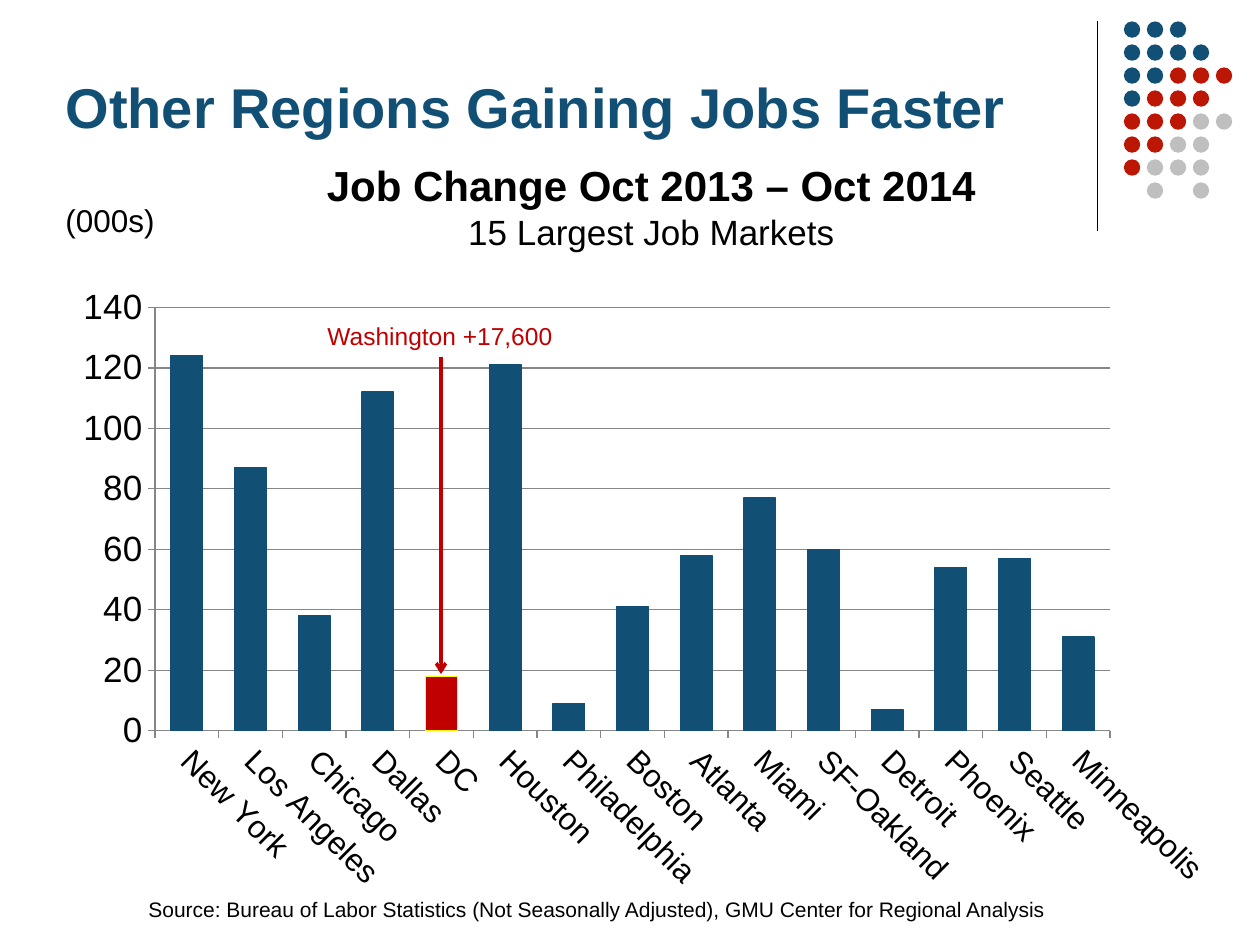
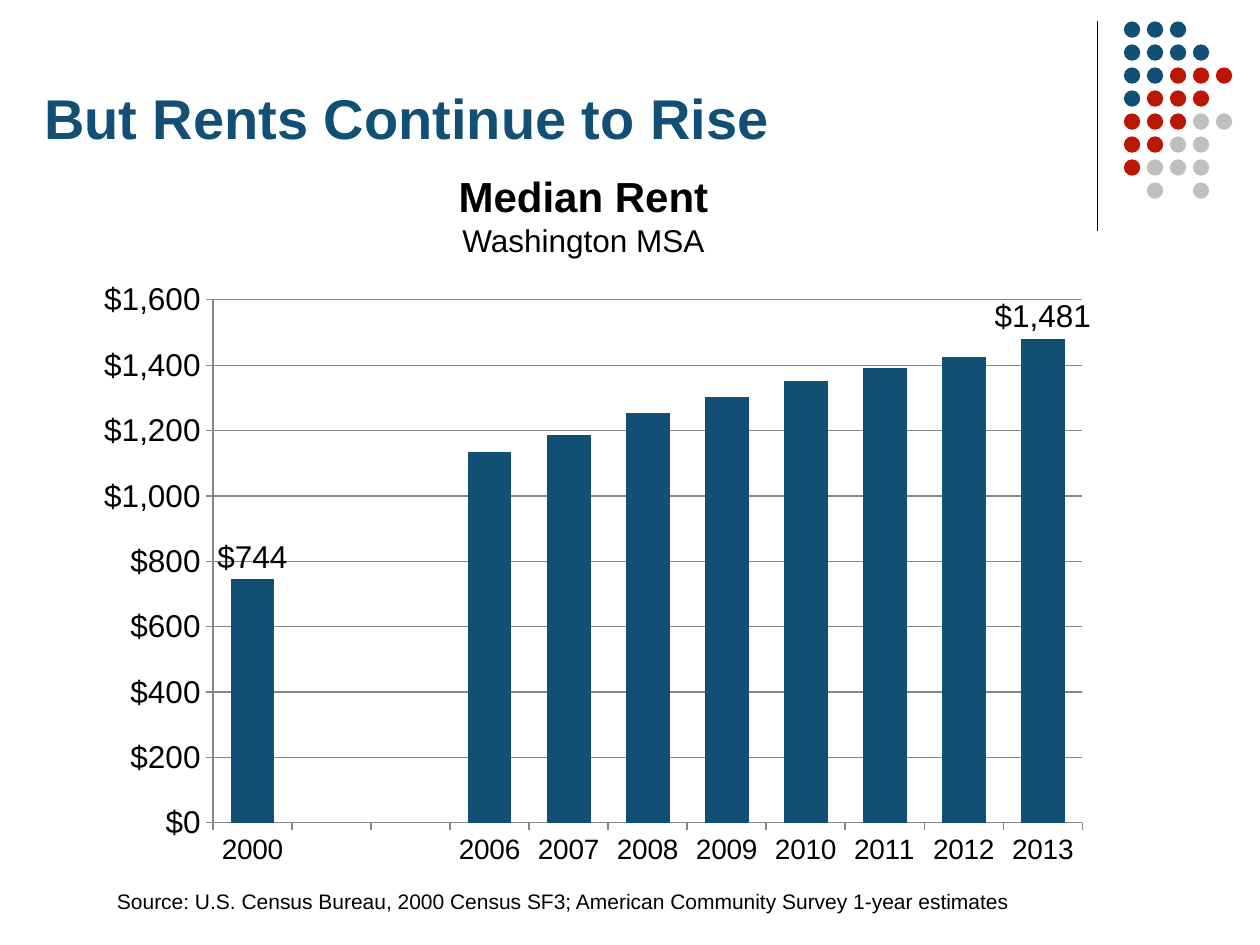
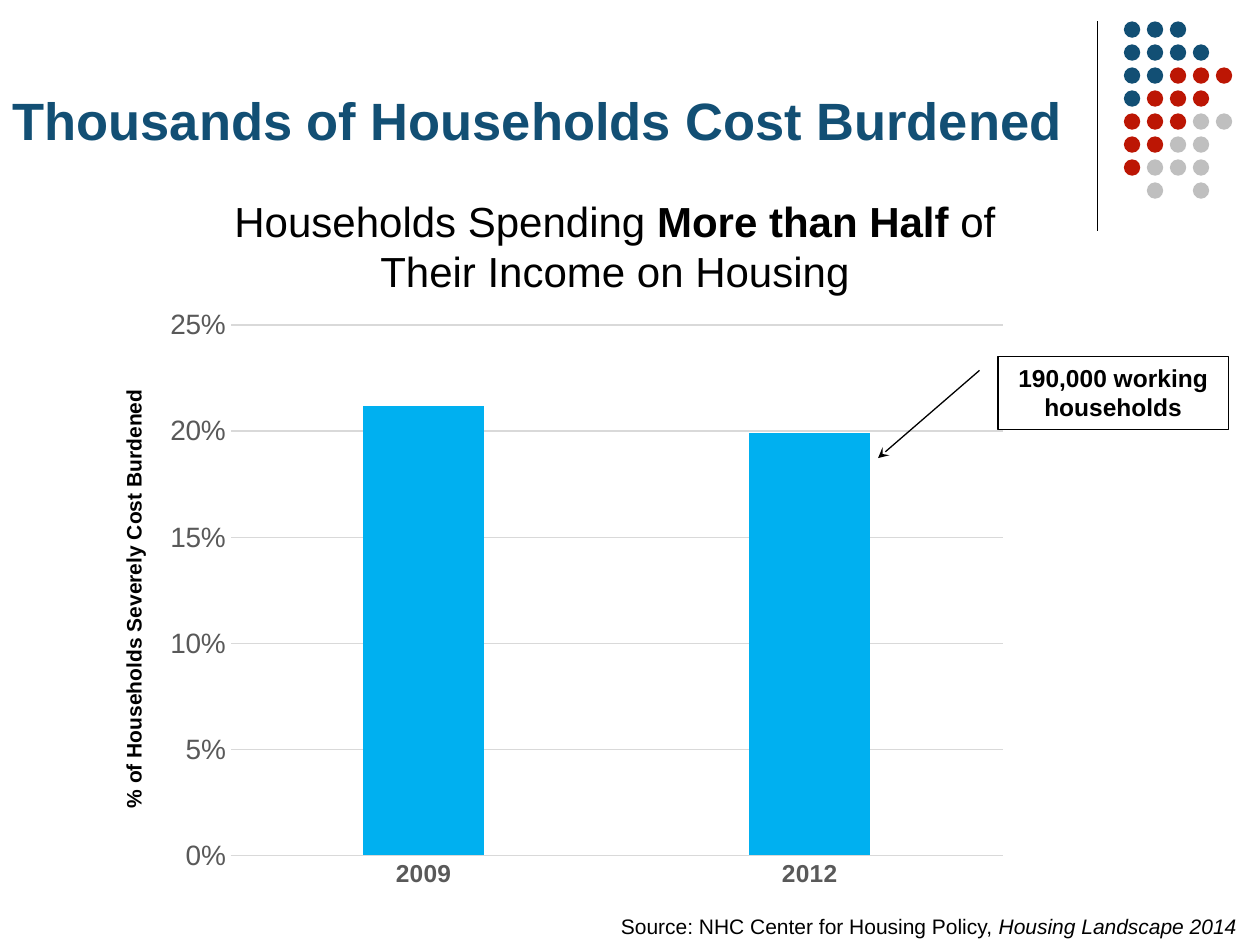
from pptx import Presentation
from pptx.chart.data import CategoryChartData
from pptx.dml.color import RGBColor
from pptx.enum.chart import XL_CHART_TYPE, XL_LABEL_POSITION, XL_TICK_LABEL_POSITION, XL_TICK_MARK
from pptx.enum.shapes import MSO_CONNECTOR, MSO_SHAPE
from pptx.enum.text import MSO_ANCHOR, MSO_AUTO_SIZE, PP_ALIGN
from pptx.oxml.xmlchemy import OxmlElement
from pptx.util import Inches, Pt

COLORS = {
    "navy": "124F74",
    "dot_red": "BC1604",
    "silver": "BFBFBF",
    "red": "C00000",
    "yellow": "FFFF00",
    "sky": "00B0F0",
    "black": "000000",
    "axis": "868686",
    "grid": "D9D9D9",
    "label": "595959",
}
FONT = "Arial"
DOT_ROWS = ["BBB..", "BBBB.", "BBRRR", "BRRR.", "RRRGG", "RRGG.", "RGGG.", ".G.G."]
DOT_COLORS = {"B": "navy", "R": "dot_red", "G": "silver"}


def rgb(name):
    return RGBColor.from_string(COLORS[name])


def inches(box):
    return [Inches(length) for length in box]


def style_font(font, size, color="black", **flags):
    values = {"name": FONT, "size": Pt(size), "bold": False, **flags}
    for name, value in values.items():
        setattr(font, name, value)
    font.color.rgb = rgb(color)


def style_line(line, color, width=0.75):
    line.color.rgb = rgb(color)
    line.width = Pt(width)


def add_arrowhead(shape, kind):
    head = OxmlElement("a:tailEnd")
    head.set("type", kind)
    shape.element.xpath("./p:spPr/a:ln")[0].append(head)


def write_text(shape, paras, align=PP_ALIGN.LEFT, **frame_values):
    """Each paragraph is a list of (text, size, font values) spans."""
    frame = shape.text_frame
    values = {"word_wrap": True, "auto_size": MSO_AUTO_SIZE.NONE, **frame_values}
    for name, value in values.items():
        setattr(frame, name, value)
    for index, spans in enumerate(paras):
        para = frame.paragraphs[0] if index == 0 else frame.add_paragraph()
        para.alignment = align
        for text, size, font_values in spans:
            span = para.add_run()
            span.text = text
            style_font(span.font, size, **font_values)


def add_text(page, box, paras, **values):
    write_text(page.shapes.add_textbox(*inches(box)), paras, **values)


def add_line(page, start, end, color, width):
    line = page.shapes.add_connector(MSO_CONNECTOR.STRAIGHT, *inches(start + end))
    style_line(line.line, color, width)
    line.element.xpath("./p:spPr")[0].append(OxmlElement("a:effectLst"))
    return line


def add_corner(page, box):
    """Vertical rule and the dot pattern to its right."""
    left, top, width, height = box
    add_line(page, (left, top), (left, top + height), "black", 0.75)
    size, dots_left = 0.13, left + 0.21
    pitch = (left + width - size - dots_left) / 4
    group = page.shapes.add_group_shape()
    for row, marks in enumerate(DOT_ROWS):
        for column, mark in enumerate(marks):
            if mark == ".":
                continue
            place = (dots_left + column * pitch, top + row * pitch, size, size)
            dot = group.shapes.add_shape(MSO_SHAPE.OVAL, *inches(place))
            dot.shadow.inherit = False
            dot.fill.solid()
            dot.fill.fore_color.rgb = rgb(DOT_COLORS[mark])
            dot.line.fill.background()


def add_page(deck, title, box, size=32):
    page = deck.slides.add_slide(deck.slide_layouts[5])
    holder = page.shapes.title
    holder.left, holder.top, holder.width, holder.height = inches(box)
    write_text(holder, [[(title, size, {"color": "navy", "bold": True})]],
               vertical_anchor=MSO_ANCHOR.BOTTOM)
    add_corner(page, (8.71, 0.17, 1.07, 1.66))
    return page


def set_plot_area(chart, box, plot):
    """Fix the inner plot; plot is in inches from the chart's corner."""
    layout = OxmlElement("c:layout")
    manual = OxmlElement("c:manualLayout")
    width, height = box[2:]
    left, top, plot_width, plot_height = plot
    settings = {
        "layoutTarget": "inner", "xMode": "edge", "yMode": "edge",
        "x": left / width, "y": top / height,
        "w": plot_width / width, "h": plot_height / height,
    }
    for name, value in settings.items():
        item = OxmlElement(f"c:{name}")
        item.set("val", str(value))
        manual.append(item)
    layout.append(manual)
    area = chart.element.xpath(".//c:plotArea")[0]
    for old in area.xpath("./c:layout"):
        area.remove(old)
    area.insert(0, layout)


def add_columns(page, box, plot, categories, values, color, gap, number_format, top_value, step,
                category_font, value_font, line_color="axis", tick=XL_TICK_MARK.OUTSIDE):
    data = CategoryChartData(number_format=number_format)
    data.categories = categories
    data.add_series("Series 1", values)
    chart = page.shapes.add_chart(XL_CHART_TYPE.COLUMN_CLUSTERED, *inches(box), data).chart
    chart.has_legend = chart.has_title = False
    style_font(chart.font, 18)
    set_plot_area(chart, box, plot)

    columns = chart.plots[0]
    columns.gap_width = gap
    columns.vary_by_categories = False
    series = columns.series[0]
    series.format.fill.solid()
    series.format.fill.fore_color.rgb = rgb(color)

    for axis, font in ((chart.category_axis, category_font), (chart.value_axis, value_font)):
        axis.major_tick_mark = tick
        axis.minor_tick_mark = XL_TICK_MARK.NONE
        style_line(axis.format.line, line_color)
        style_font(axis.tick_labels.font, **font)
    scale = chart.value_axis
    scale.minimum_scale, scale.maximum_scale, scale.major_unit = 0, top_value, step
    scale.tick_labels.number_format = number_format
    scale.tick_labels.number_format_is_linked = False
    scale.has_major_gridlines = True
    style_line(scale.major_gridlines.format.line, line_color)
    return chart


def build_jobs(deck):
    page = add_page(deck, "Other Regions Gaining Jobs Faster", (0.42, 0.25, 8.33, 0.91))
    jobs = {
        "New York": 124, "Los Angeles": 87, "Chicago": 38, "Dallas": 112, "DC": 18,
        "Houston": 121, "Philadelphia": 9, "Boston": 41, "Atlanta": 58, "Miami": 77,
        "SF-Oakland": 60, "Detroit": 7, "Phoenix": 54, "Seattle": 57, "Minneapolis": 31,
    }
    chart = add_columns(
        page, (0.44, 1.94, 9.17, 5.19), (0.79, 0.5, 7.58, 3.36), list(jobs), list(jobs.values()),
        "navy", 100, "#,##0", 140, 20, {"size": 18}, {"size": 20})
    chart.category_axis.tick_label_position = XL_TICK_LABEL_POSITION.LOW
    label_body = chart.element.xpath(".//c:catAx/c:txPr/a:bodyPr")[0]
    label_body.set("rot", "2700000")
    label_body.set("vert", "horz")

    # Washington's column stands out
    series = chart.plots[0].series[0]
    style_line(series.format.line, "navy")
    column = series.points[list(jobs).index("DC")].format
    column.fill.solid()
    column.fill.fore_color.rgb = rgb("red")
    style_line(column.line, "yellow")
    add_text(page, (2.5, 2.5, 2, 0.34), [[("Washington +17,600", 14, {"color": "red"})]],
             word_wrap=False)
    add_arrowhead(add_line(page, (3.5, 2.83), (3.5, 5.35), "red", 2), "arrow")

    # Heading, unit and source
    add_text(page, (1.42, 1.75, 7.5, 0.62),
             [[("Job Change Oct 2013 – Oct 2014", 24, {"bold": True})],
              [("15 Largest Job Markets", 20, {})]],
             align=PP_ALIGN.CENTER, vertical_anchor=MSO_ANCHOR.BOTTOM, margin_bottom=Inches(0.37))
    add_text(page, (0.42, 1.55, 0.92, 0.4), [[("(000s)", 18, {})]], word_wrap=False)
    source = ("Source: Bureau of Labor Statistics (Not Seasonally Adjusted), "
              "GMU Center for Regional Analysis")
    add_text(page, (1.08, 7.07, 8.83, 0.3), [[(source, 12, {})]])


def build_rents(deck):
    page = add_page(deck, "But Rents Continue to Rise", (0.25, 0.25, 8.42, 1))
    years = ["2000", "", ""] + [str(year) for year in range(2006, 2014)]
    rents = [744, None, None, 1133, 1187, 1253, 1303, 1351, 1391, 1424, 1481]
    chart = add_columns(
        page, (0.67, 2.15, 8.08, 4.82), (1.02, 0.23, 6.9, 4.15), years, rents,
        "navy", 80, '"$"#,##0', 1600, 200, {"size": 16}, {"size": 18})

    # Only the first and last columns carry a value
    series = chart.plots[0].series[0]
    series.data_labels.show_value = False
    for index in (0, len(rents) - 1):
        label = series.points[index].data_label
        style_font(label.font, 18)
        label.position = XL_LABEL_POSITION.OUTSIDE_END

    add_text(page, (0.42, 1.6, 8.42, 0.5),
             [[("Median Rent", 24, {"bold": True})], [("Washington MSA", 18, {})]],
             align=PP_ALIGN.CENTER, vertical_anchor=MSO_ANCHOR.BOTTOM)
    source = ("Source: U.S. Census Bureau, 2000 Census SF3; "
              "American Community Survey 1-year estimates")
    add_text(page, (0.83, 7, 7.92, 0.3), [[(source, 12, {})]])


def add_callout(page, box, text):
    callout = page.shapes.add_shape(MSO_SHAPE.LINE_CALLOUT_1, *inches(box))
    callout.shadow.inherit = False
    callout.fill.background()
    style_line(callout.line, "black")
    for index, value in enumerate((0.19, -0.08, 1.39, -0.52)):
        callout.adjustments[index] = value
    add_arrowhead(callout, "stealth")
    write_text(callout, [[(text, 14, {"bold": True})]], align=PP_ALIGN.CENTER,
               vertical_anchor=MSO_ANCHOR.TOP)


def build_burden(deck):
    page = add_page(deck, "Thousands of Households Cost Burdened", (0, 0.25, 8.67, 1), 30)
    chart = add_columns(
        page, (0.75, 2.33, 7.33, 4.82), (1.08, 0.25, 6.13, 4.21), ["2009", "2012"],
        [0.212, 0.199], "sky", 219, "0%", 0.25, 0.05,
        {"size": 14, "color": "label", "bold": True}, {"size": 16, "color": "label"},
        "grid", XL_TICK_MARK.NONE)
    scale = chart.value_axis
    scale.format.line.fill.background()
    title = scale.axis_title.text_frame
    title.text = "% of Households Severely Cost Burdened"
    style_font(title.paragraphs[0].runs[0].font, 12, bold=True)

    add_text(page, (1.67, 1.5, 6.42, 0.91),
             [[("Households Spending ", 24, {}), ("More than Half ", 24, {"bold": True}),
               ("of Their Income on Housing", 24, {})]], align=PP_ALIGN.CENTER)
    add_callout(page, (7.92, 2.83, 1.83, 0.58), "190,000 working households")
    add_text(page, (4.83, 7.2, 5.17, 0.3),
             [[("Source: NHC Center for Housing Policy, ", 12, {}),
               ("Housing Landscape 2014", 12, {"italic": True})]], word_wrap=False)


def main():
    deck = Presentation()
    deck.slide_width, deck.slide_height = Inches(10), Inches(7.5)
    for build in (build_jobs, build_rents, build_burden):
        build(deck)
    deck.save("out.pptx")


if __name__ == "__main__":
    main()
